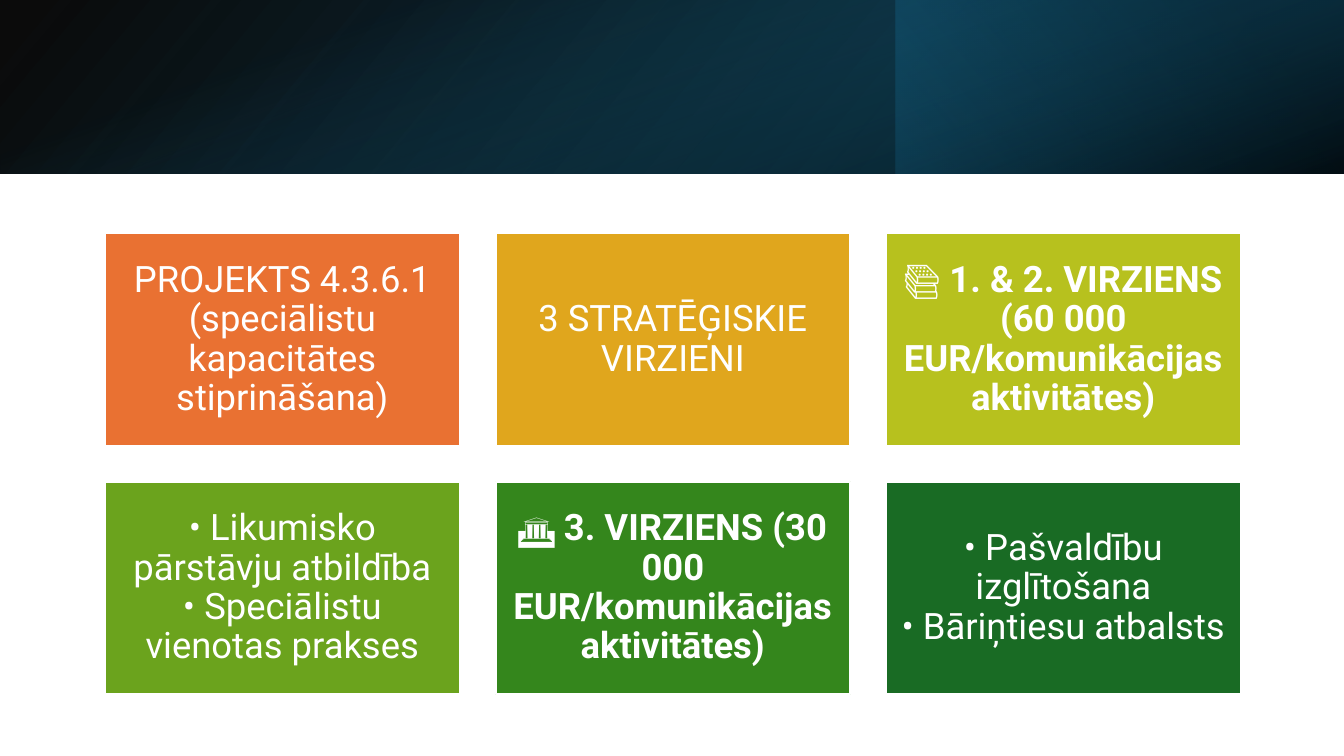
from lxml.etree import SubElement
from pptx import Presentation
from pptx.dml.color import RGBColor
from pptx.enum.shapes import MSO_SHAPE
from pptx.enum.text import MSO_ANCHOR, PP_ALIGN
from pptx.oxml.ns import qn
from pptx.util import Cm, Pt

WHITE = RGBColor(0xFF, 0xFF, 0xFF)
BLACK = RGBColor(0x00, 0x00, 0x00)
TEAL = RGBColor(0x15, 0x60, 0x82)
DEEP_TEAL = RGBColor(0x10, 0x48, 0x62)
NAVY = RGBColor(0x0B, 0x30, 0x41)
ORANGE = RGBColor(0xE9, 0x71, 0x32)
AMBER = RGBColor(0xE0, 0xA6, 0x1D)
LIME = RGBColor(0xB7, 0xC1, 0x1E)
LEAF = RGBColor(0x6B, 0xA3, 0x1D)
GREEN = RGBColor(0x34, 0x86, 0x1C)
FOREST = RGBColor(0x19, 0x6B, 0x24)

# Fill, bold, lines
CARDS = [
    (ORANGE, False, ["PROJEKTS 4.3.6.1 (speciālistu kapacitātes stiprināšana)"]),
    (AMBER, False, ["3 STRATĒĢISKIE VIRZIENI"]),
    (LIME, True, ["📚 1. & 2. VIRZIENS (60 000 EUR/komunikācijas aktivitātes)"]),
    (LEAF, False, ["• Likumisko pārstāvju atbildība", "• Speciālistu vienotas prakses"]),
    (GREEN, True, ["🏛️ 3. VIRZIENS (30 000 EUR/komunikācijas aktivitātes)"]),
    (FOREST, False, ["• Pašvaldību izglītošana", "• Bāriņtiesu atbalsts"]),
]

SLIDE_WIDTH, SLIDE_HEIGHT = Cm(33.87), Cm(19.05)
BANNER_HEIGHT = Cm(4.38)
GLOW_WIDTH = Cm(11.29)
COLUMNS = 3
GRID_LEFT, GRID_TOP = Cm(2.65), Cm(5.88)
CARD_WIDTH, CARD_HEIGHT = Cm(8.94), Cm(5.36)
GAP = Cm(0.9)
INSET = Cm(0.28)


def add_rectangle(slide, left, top, width, height):
    shape = slide.shapes.add_shape(MSO_SHAPE.RECTANGLE, left, top, width, height)
    shape.shadow.inherit = False
    return shape


def add_banner_layer(slide, box, rotation, angle, stops):
    """Add a gradient layer; stops are (position, colour, opacity), both in percent."""
    layer = add_rectangle(slide, *box)
    layer.rotation = rotation
    layer.line.fill.background()
    layer.fill.gradient()
    layer.fill.gradient_angle = 360 - angle
    for stop, (position, colour, _) in zip(layer.fill.gradient_stops, stops):
        stop.position = position / 100
        stop.color.rgb = colour
    colours = layer.element.spPr.iter(qn("a:srgbClr"))
    for element, (_, _, opacity) in zip(list(colours), stops):
        SubElement(element, qn("a:alpha")).set("val", str(opacity * 1000))
    return layer


def add_banner(slide):
    base = add_banner_layer(slide, (0, 0, SLIDE_WIDTH, BANNER_HEIGHT), 0, 140,
                            [(0, BLACK, 96), (100, DEEP_TEAL, 100)])
    base.element.spPr.xfrm.set("flipH", "1")
    add_banner_layer(slide, (SLIDE_WIDTH - GLOW_WIDTH, 0, GLOW_WIDTH, BANNER_HEIGHT), 180, 320,
                     [(19, NAVY, 68), (100, TEAL, 79)])
    # A quarter turn about the centre lays this tall layer over the banner
    offset = (SLIDE_WIDTH - BANNER_HEIGHT) // 2
    add_banner_layer(slide, (offset, -offset, BANNER_HEIGHT, SLIDE_WIDTH), 90, 340,
                     [(23, TEAL, 0), (99, BLACK, 74)])


def add_card(slide, index, colour, bold, lines):
    row, column = divmod(index, COLUMNS)
    card = add_rectangle(slide, GRID_LEFT + column * (CARD_WIDTH + GAP),
                         GRID_TOP + row * (CARD_HEIGHT + GAP), CARD_WIDTH, CARD_HEIGHT)
    card.fill.solid()
    card.fill.fore_color.rgb = colour
    card.line.color.rgb = WHITE
    card.line.width = Pt(1.5)

    frame = card.text_frame
    frame.word_wrap = True
    frame.vertical_anchor = MSO_ANCHOR.MIDDLE
    frame.margin_left = frame.margin_right = INSET
    frame.margin_top = frame.margin_bottom = INSET
    paragraph = frame.paragraphs[0]
    paragraph.alignment = PP_ALIGN.CENTER
    paragraph.line_spacing = 0.9
    for number, line in enumerate(lines):
        if number:
            paragraph.add_line_break()
        run = paragraph.add_run()
        run.text = line
        run.font.name = "Roboto"
        run.font.size = Pt(26)
        run.font.bold = bold
        run.font.color.rgb = WHITE


def main():
    presentation = Presentation()
    presentation.slide_width = SLIDE_WIDTH
    presentation.slide_height = SLIDE_HEIGHT
    slide = presentation.slides.add_slide(presentation.slide_layouts.get_by_name("Blank"))
    add_banner(slide)
    for index, card in enumerate(CARDS):
        add_card(slide, index, *card)
    presentation.save("out.pptx")


if __name__ == "__main__":
    main()
